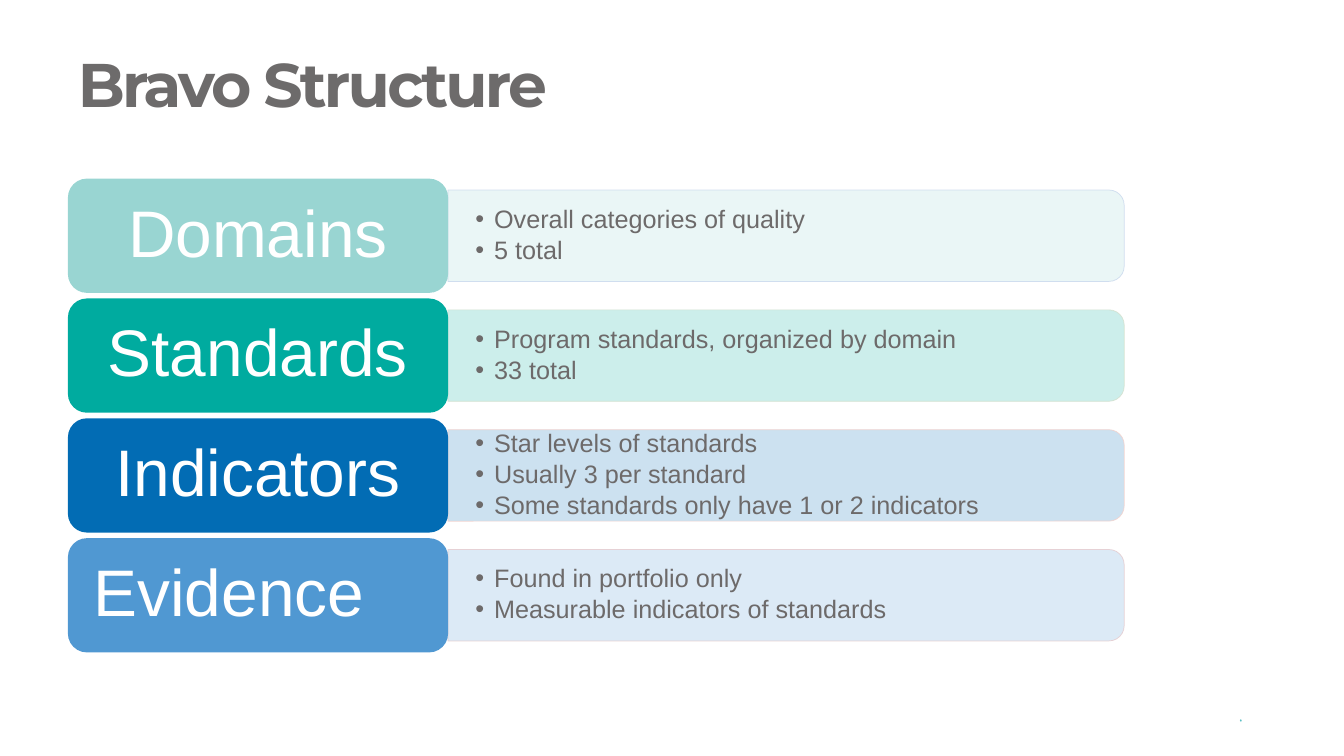
import pptx
import pptx.dml.color
import pptx.enum.shapes
import pptx.enum.text
import pptx.oxml.ns
import pptx.util
from lxml import etree

Pt = pptx.util.Pt
SHAPE = pptx.enum.shapes.MSO_SHAPE
ALIGN = pptx.enum.text.PP_ALIGN
ANCHOR = pptx.enum.text.MSO_ANCHOR

COLORS = {
    "white": "FFFFFF",
    "title": "6D6B6B",
    "body": "6D6A6A",
    "number": "009DA5",
    "aqua": "99D5D2",
    "teal": "00AB9F",
    "blue": "026CB4",
    "sky": "5098D2",
    "aqua_edge": "CCDBEE",
    "teal_edge": "D4E1CF",
    "blue_edge": "F3D2CD",
    "sky_edge": "E5CDD1",
}

ROWS = [
    ("Domains", "aqua", ALIGN.CENTER,
     ["Overall categories of quality", "5 total"]),
    ("Standards", "teal", ALIGN.CENTER,
     ["Program standards, organized by domain", "33 total"]),
    ("Indicators", "blue", ALIGN.CENTER,
     ["Star levels of standards", "Usually 3 per standard",
      "Some standards only have 1 or 2 indicators"]),
    ("Evidence", "sky", ALIGN.LEFT,
     ["Found in portfolio only", "Measurable indicators of standards"]),
]

FIRST_CENTER = 168.4
ROW_PITCH = 85.6
LABEL_LEFT, LABEL_WIDTH, LABEL_HEIGHT = 48.5, 271.6, 81.6
PANEL_LEFT, PANEL_WIDTH, PANEL_HEIGHT = 320, 483, 65.3


def rgb(name):
    return pptx.dml.color.RGBColor.from_string(COLORS[name])


def set_alpha(fill_parent, percent):
    color = fill_parent.find(".//" + pptx.oxml.ns.qn("a:srgbClr"))
    alpha = etree.SubElement(color, pptx.oxml.ns.qn("a:alpha"))
    alpha.set("val", str(percent * 1000))


def set_bullet(paragraph):
    properties = paragraph._p.get_or_add_pPr()
    properties.set("marL", str(Pt(13.5)))
    properties.set("indent", str(-Pt(13.5)))
    font = etree.SubElement(properties, pptx.oxml.ns.qn("a:buFont"))
    font.set("typeface", "Arial")
    bullet = etree.SubElement(properties, pptx.oxml.ns.qn("a:buChar"))
    bullet.set("char", "•")


def style_run(paragraph, size, color, font="Arial", bold=False):
    run = paragraph.runs[0]
    run.font.size = Pt(size)
    run.font.name = font
    run.font.bold = bold
    run.font.color.rgb = rgb(color)
    return run


def set_frame(frame, horizontal, vertical, anchor):
    frame.word_wrap = True
    frame.vertical_anchor = anchor
    frame.margin_left = frame.margin_right = Pt(horizontal)
    frame.margin_top = frame.margin_bottom = Pt(vertical)


def add_text_box(slide, left, top, width, height, text, margins, anchor):
    box = slide.shapes.add_textbox(Pt(left), Pt(top), Pt(width), Pt(height))
    set_frame(box.text_frame, *margins, anchor)
    box.text_frame.text = text
    return box.text_frame


def add_shape(slide, kind, left, top, width, height, color):
    shape = slide.shapes.add_shape(kind, Pt(left), Pt(top), Pt(width), Pt(height))
    shape.shadow.inherit = False
    shape.fill.solid()
    shape.fill.fore_color.rgb = rgb(color)
    return shape


def add_panel(slide, center, color, points):
    shape = add_shape(slide, SHAPE.ROUND_2_SAME_RECTANGLE,
                      PANEL_LEFT + (PANEL_WIDTH - PANEL_HEIGHT) / 2,
                      center - PANEL_WIDTH / 2, PANEL_HEIGHT, PANEL_WIDTH, color)
    shape.rotation = 90
    set_alpha(shape._element.spPr.find(pptx.oxml.ns.qn("a:solidFill")), 20)
    shape.line.width = Pt(0.5)
    shape.line.color.rgb = rgb(color + "_edge")
    set_alpha(shape.line._get_or_add_ln(), 90)

    frame = add_text_box(slide, PANEL_LEFT, center - 29.5, 479.6, 59,
                         "\n".join(points), (19.5, 10), ANCHOR.MIDDLE)
    for paragraph in frame.paragraphs:
        paragraph.level = 1
        paragraph.line_spacing = 0.9
        paragraph.space_after = Pt(2.7)
        set_bullet(paragraph)
        style_run(paragraph, 18, "body")


def add_label(slide, center, text, color, alignment):
    shape = add_shape(slide, SHAPE.ROUNDED_RECTANGLE, LABEL_LEFT,
                      center - LABEL_HEIGHT / 2, LABEL_WIDTH, LABEL_HEIGHT, color)
    shape.line.fill.background()
    set_frame(shape.text_frame, 14.4, 7.2, ANCHOR.MIDDLE)
    shape.text_frame.text = text
    paragraph = shape.text_frame.paragraphs[0]
    paragraph.alignment = alignment
    paragraph.line_spacing = 0.9
    style_run(paragraph, 47, "white")


def add_title(slide, text):
    frame = add_text_box(slide, 48.5, 17.3, 684, 72, text, (7.2, 3.6), ANCHOR.BOTTOM)
    paragraph = frame.paragraphs[0]
    paragraph.line_spacing = Pt(44)
    run = style_run(paragraph, 44, "title", "Montserrat", True)
    run.font._element.set("spc", "-200")


def add_slide_number(slide, text):
    frame = add_text_box(slide, 678.2, 500.4, 216, 28.8, text, (7.2, 3.6), ANCHOR.MIDDLE)
    paragraph = frame.paragraphs[0]
    paragraph.alignment = ALIGN.RIGHT
    style_run(paragraph, 2.5, "number", "Cabin", True)


def main():
    presentation = pptx.Presentation()
    presentation.slide_width = Pt(960)
    presentation.slide_height = Pt(540)
    slide = presentation.slides.add_slide(presentation.slide_layouts[6])
    for index, (name, color, alignment, points) in enumerate(ROWS):
        center = FIRST_CENTER + index * ROW_PITCH
        add_panel(slide, center, color, points)
        add_label(slide, center, name, color, alignment)
    add_title(slide, "Bravo Structure")
    add_slide_number(slide, "9")
    presentation.save("out.pptx")


if __name__ == "__main__":
    main()
